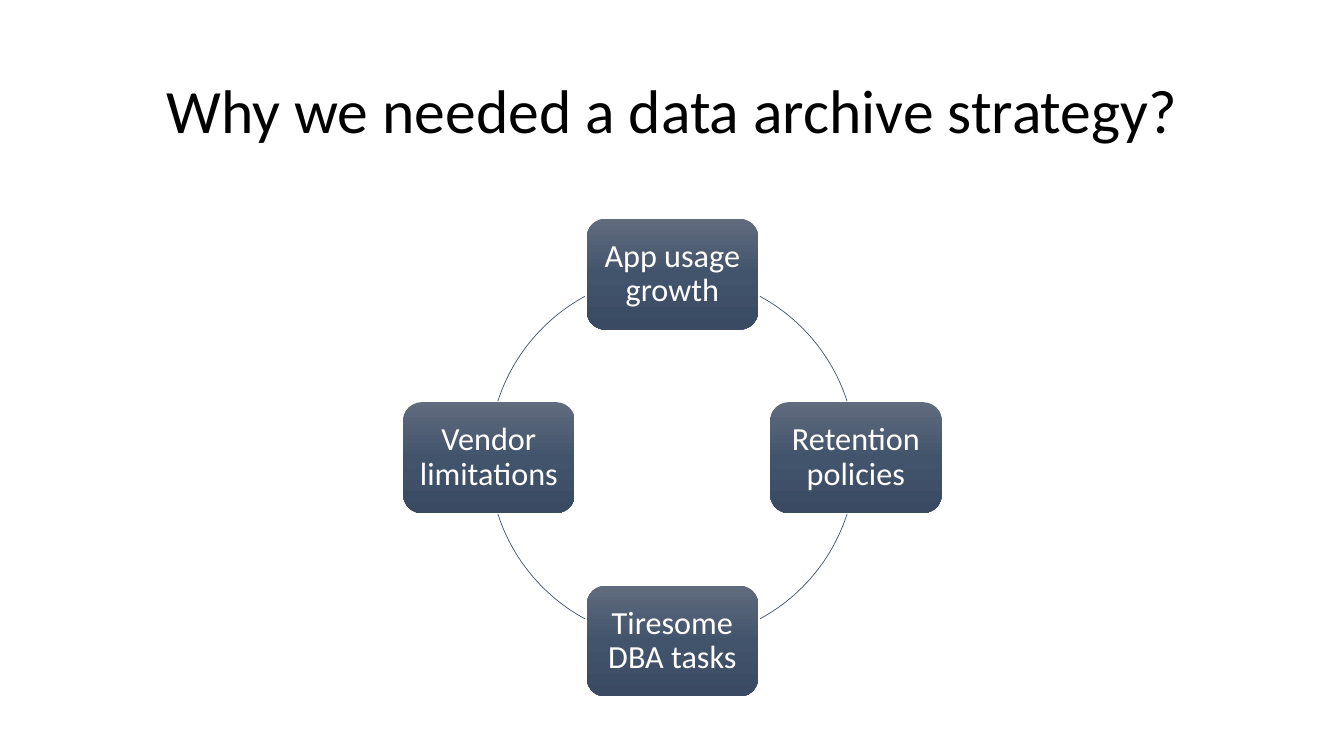
from copy import deepcopy
from math import cos, radians, sin
from pptx import Presentation
from pptx.dml.color import RGBColor
from pptx.enum import shapes, text
from pptx.oxml import ns
from pptx.util import Inches, Pt

TITLE = "Why we needed a data archive strategy?"
STEPS = ["App usage growth", "Retention policies", "Tiresome DBA tasks", "Vendor limitations"]
STOPS = [(0, "606B7D"), (0.5, "42546C"), (1, "394A62")]
ARCS = [(-61.5, -17.9), (17.9, 61.5), (118.5, 162.1), (197.9, 241.5)]
MID_X, MID_Y, RADIUS = 6.67, 4.54, 1.82
BOX_W, BOX_H = 1.7, 1.1


def paint(color):
    return RGBColor.from_string(color)


def write(shape, words, size, color, inset=0.1):
    frame = shape.text_frame
    frame.word_wrap = True
    frame.auto_size = text.MSO_AUTO_SIZE.NONE
    frame.vertical_anchor = text.MSO_ANCHOR.MIDDLE
    frame.margin_left = frame.margin_right = Inches(inset)
    para = frame.paragraphs[0]
    para.alignment = text.PP_ALIGN.CENTER
    para.line_spacing = 0.9
    run = para.add_run()
    run.text = words
    run.font.name = "Calibri"
    run.font.size = Pt(size)
    run.font.color.rgb = paint(color)


def shade(shape):
    shape.fill.gradient()
    shape.fill.gradient_angle = 270
    group = next(shape._element.spPr.iter(ns.qn("a:gsLst")))
    group.append(deepcopy(group[0]))
    for stop, (place, color) in zip(shape.fill.gradient_stops, STOPS):
        stop.position = place
        stop.color.rgb = paint(color)


def add_box(slide, words, angle):
    left = MID_X + RADIUS * cos(radians(angle)) - BOX_W / 2
    top = MID_Y + RADIUS * sin(radians(angle)) - BOX_H / 2
    box = slide.shapes.add_shape(
        shapes.MSO_SHAPE.ROUNDED_RECTANGLE,
        Inches(left), Inches(top), Inches(BOX_W), Inches(BOX_H))
    box.shadow.inherit = False
    box.line.fill.background()
    shade(box)
    write(box, words, 23, "FFFFFF", 0.08)


def add_arc(slide, start, end):
    arc = slide.shapes.add_shape(
        shapes.MSO_SHAPE.ARC,
        Inches(MID_X - RADIUS), Inches(MID_Y - RADIUS),
        Inches(2 * RADIUS), Inches(2 * RADIUS))
    arc.shadow.inherit = False
    arc.fill.background()
    arc.line.color.rgb = paint("44546A")
    arc.line.width = Pt(0.5)
    for i, angle in enumerate((start, end)):
        arc.adjustments[i] = angle % 360 * 0.6


def main():
    deck = Presentation()
    deck.slide_width, deck.slide_height = Inches(13.33), Inches(7.5)
    slide = deck.slides.add_slide(deck.slide_layouts[5])
    title = slide.shapes.title
    title.left, title.top = Inches(0.92), Inches(0.4)
    title.width, title.height = Inches(11.5), Inches(1.45)
    write(title, TITLE, 44, "000000")
    for i, (words, span) in enumerate(zip(STEPS, ARCS)):
        add_box(slide, words, 90 * i - 90)
        add_arc(slide, *span)
    deck.save("out.pptx")


if __name__ == "__main__":
    main()
